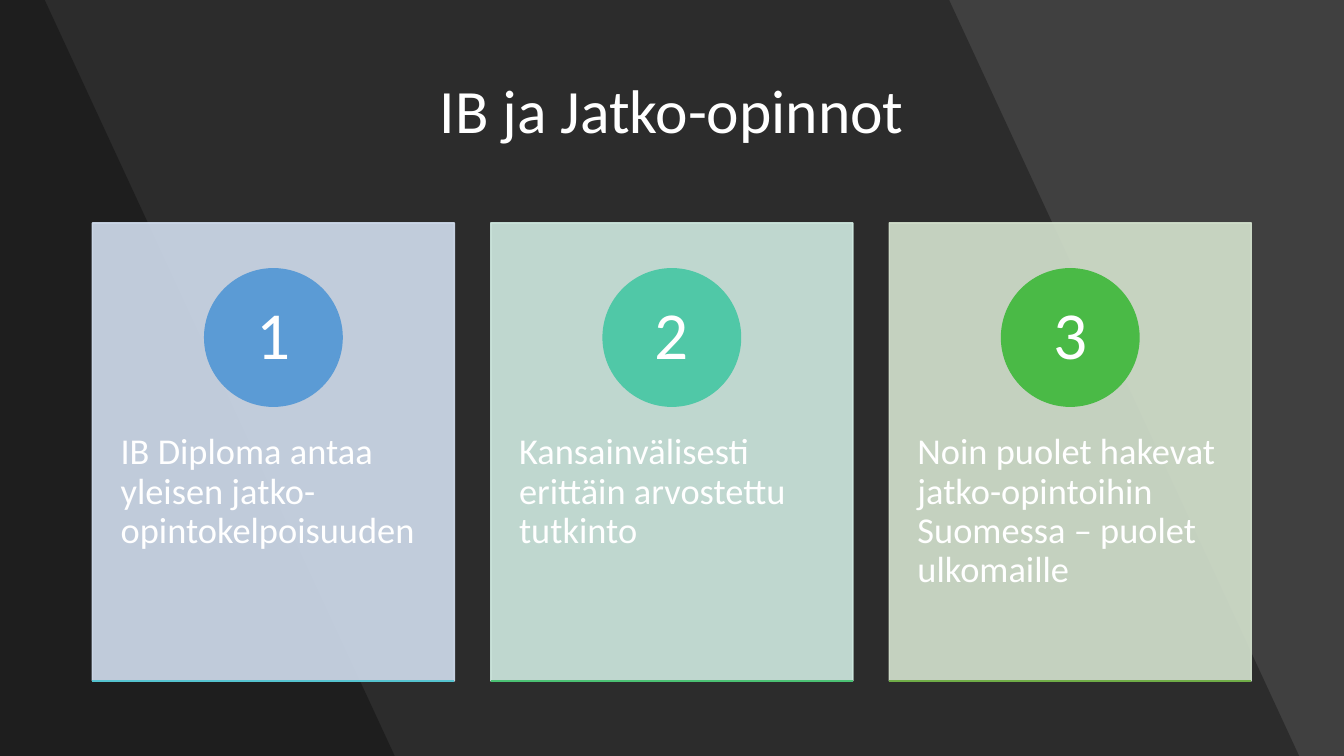
"""Build the slide on the IB diploma and further studies."""
from dataclasses import dataclass

from lxml.etree import SubElement
from pptx import Presentation
from pptx.dml.color import RGBColor
from pptx.enum.shapes import MSO_CONNECTOR as Connector, MSO_SHAPE as Preset
from pptx.enum.text import MSO_ANCHOR as Anchor, PP_ALIGN as Align
from pptx.oxml.ns import qn
from pptx.util import Pt


@dataclass(frozen=True)
class Theme:
    font: str = "Calibri"
    background: str = "404040"
    shade: str = "000000"
    text: str = "FFFFFF"
    panels: tuple = ("D2DEEF", "D0EAE1", "D5E3CF")
    circles: tuple = ("5B9BD5", "50C8A7", "4ABA46")
    rules: tuple = ("55C3CF", "4BC174", "70AD47")
    title_size: int = 44
    number_size: int = 48
    body_size: int = 26


theme = Theme()


def paint(shape, color, opacity=100, outlined=True):
    shape.shadow.inherit = False
    fills = [shape.fill]
    if outlined:
        shape.line.width = Pt(1)
        fills.append(shape.line.fill)
    else:
        shape.line.fill.background()
    for fill in fills:
        fill.solid()
        fill.fore_color.rgb = RGBColor.from_string(color)
    if opacity < 100:
        for color_element in shape._element.spPr.iter(qn("a:srgbClr")):
            SubElement(color_element, qn("a:alpha"), val=str(opacity * 1000))


def write(shape, text, size, align=Align.LEFT, anchor=Anchor.TOP, inset=(7.2, 3.6)):
    frame = shape.text_frame
    frame.word_wrap = True
    frame.vertical_anchor = anchor
    frame.margin_left = frame.margin_right = Pt(inset[0])
    frame.margin_top = frame.margin_bottom = Pt(inset[1])
    paragraph = frame.paragraphs[0]
    paragraph.text = text
    paragraph.alignment = align
    paragraph.line_spacing = 0.9
    paragraph.font.name = theme.font
    paragraph.font.size = Pt(size)
    paragraph.font.color.rgb = RGBColor.from_string(theme.text)


presentation = Presentation()
presentation.slide_width, presentation.slide_height = Pt(960), Pt(540)
slide = presentation.slides.add_slide(presentation.slide_layouts[6])
slide.background.fill.solid()
slide.background.fill.fore_color.rgb = RGBColor.from_string(theme.background)
shapes = slide.shapes

for top_edge, bottom_edge in ((678, 928), (32, 282)):
    builder = shapes.build_freeform(0, 0, scale=Pt(1))
    builder.add_line_segments([(top_edge, 0), (bottom_edge, 540), (0, 540)], close=True)
    paint(builder.convert_to_shape(), theme.shade, opacity=30, outlined=False)

title = shapes.add_textbox(Pt(65.5), Pt(28.8), Pt(829), Pt(104.4))
write(title, "IB ja Jatko-opinnot", theme.title_size, align=Align.CENTER, anchor=Anchor.MIDDLE)

messages = (
    "IB Diploma antaa yleisen jatko-opintokelpoisuuden",
    "Kansainvälisesti erittäin arvostettu tutkinto",
    "Noin puolet hakevat jatko-opintoihin Suomessa – puolet ulkomaille",
)
card_left, card_top, card_width, card_height = 66, 159.2, 258.6, 327.2
card_pitch = 284.6
circle_size = 98.2
columns = zip(messages, theme.panels, theme.circles, theme.rules)
for index, (message, panel_color, circle_color, rule_color) in enumerate(columns):
    left = card_left + index * card_pitch
    bottom = card_top + card_height

    panel = shapes.add_shape(Preset.RECTANGLE, Pt(left), Pt(card_top), Pt(card_width), Pt(card_height))
    paint(panel, panel_color, opacity=90)

    body = shapes.add_textbox(Pt(left), Pt(283.6), Pt(card_width), Pt(196.4))
    write(body, message, theme.body_size, inset=(20.16, 25.92))

    circle_left = left + (card_width - circle_size) / 2
    circle = shapes.add_shape(Preset.OVAL, Pt(circle_left), Pt(192), Pt(circle_size), Pt(circle_size))
    paint(circle, circle_color)
    write(circle, str(index + 1), theme.number_size, align=Align.CENTER, anchor=Anchor.MIDDLE, inset=(7.2, 0.72))

    rule = shapes.add_connector(Connector.STRAIGHT, Pt(left), Pt(bottom), Pt(left + card_width), Pt(bottom))
    rule.line.width = Pt(1)
    rule.line.color.rgb = RGBColor.from_string(rule_color)
    SubElement(rule._element.spPr, qn("a:effectLst"))

presentation.save("out.pptx")
